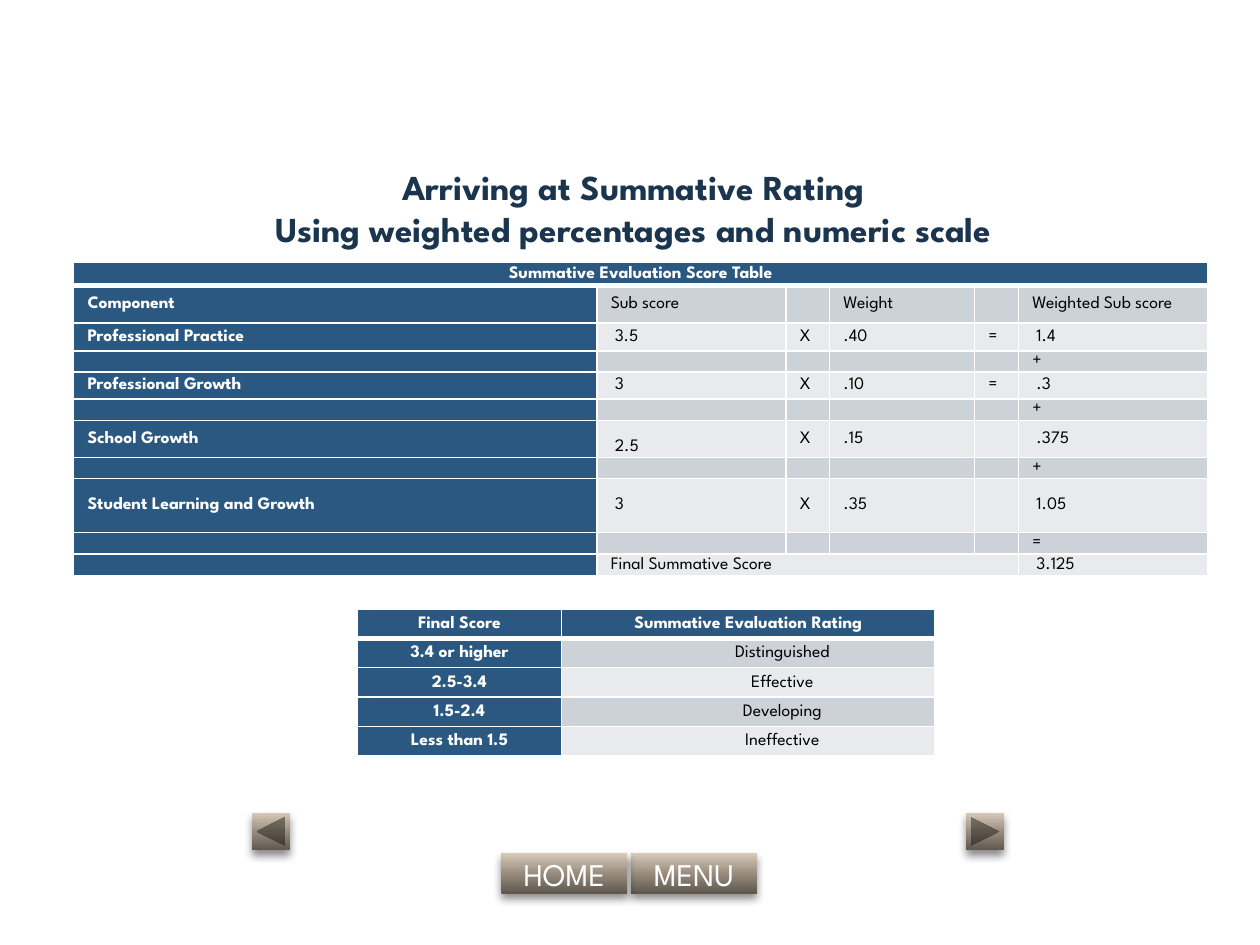
import dataclasses

import pptx
import pptx.dml.color
import pptx.enum.shapes
import pptx.enum.text
import pptx.oxml
import pptx.oxml.ns
import pptx.util

Pt = pptx.util.Pt
SHAPES = pptx.enum.shapes.MSO_SHAPE
ALIGN = pptx.enum.text.PP_ALIGN
MIDDLE = pptx.enum.text.MSO_ANCHOR.MIDDLE
NAMESPACE = pptx.oxml.ns.nsdecls("a")


@dataclasses.dataclass(frozen=True)
class Theme:
    font: str = "League Spartan"
    title: str = "1A354D"
    header: str = "2B5880"
    dark_band: str = "CDD1D8"
    light_band: str = "E8EAED"
    white: str = "FFFFFF"
    black: str = "000000"
    button_stops: tuple = ((0, "5F574E"), (50, "988C7E"), (70, "B2A596"), (100, "D8CAB8"))
    title_size: int = 20
    button_size: int = 18
    table_size: int = 10


THEME = Theme()


def rgb(value):
    return pptx.dml.color.RGBColor.from_string(value)


def style(paragraph, size, color, bold=False, align=ALIGN.LEFT):
    paragraph.alignment = align
    paragraph.font.name = THEME.font
    paragraph.font.size = Pt(size)
    paragraph.font.bold = bold
    paragraph.font.color.rgb = rgb(color)


def add_button(page, kind, left, top, width, height, label=""):
    button = page.shapes.add_shape(kind, Pt(left), Pt(top), Pt(width), Pt(height))
    button.line.fill.background()
    button.fill.gradient()
    button.fill.gradient_angle = 90
    properties = button._element.spPr
    stops = properties.find(".//" + pptx.oxml.ns.qn("a:gsLst"))
    for stop in list(stops):
        stops.remove(stop)
    for position, color in THEME.button_stops:
        stops.append(pptx.oxml.parse_xml(
            f'<a:gs {NAMESPACE} pos="{position * 1000}"><a:srgbClr val="{color}"/></a:gs>'))
    button.shadow.inherit = False
    properties.find(pptx.oxml.ns.qn("a:effectLst")).append(pptx.oxml.parse_xml(
        f'<a:outerShdw {NAMESPACE} blurRad="{Pt(5)}" dist="{Pt(3)}" dir="5400000" rotWithShape="0">'
        f'<a:srgbClr val="{THEME.black}"><a:alpha val="45000"/></a:srgbClr></a:outerShdw>'))
    if label:
        frame = button.text_frame
        frame.vertical_anchor = MIDDLE
        frame.text = label
        style(frame.paragraphs[0], THEME.button_size, THEME.white, align=ALIGN.CENTER)


def add_title(page, text):
    box = page.shapes.add_textbox(Pt(2), Pt(96), Pt(720), Pt(66))
    frame = box.text_frame
    frame.word_wrap = True
    frame.vertical_anchor = MIDDLE
    frame.margin_top, frame.margin_bottom = 0, Pt(21)
    frame.text = text
    paragraph = frame.paragraphs[0]
    paragraph.line_spacing = Pt(24)
    style(paragraph, THEME.title_size, THEME.title, True, ALIGN.CENTER)


def set_borders(cell, bottom):
    properties = cell._tc.get_or_add_tcPr()
    for side, width in (("L", 1), ("R", 1), ("T", 1), ("B", bottom)):
        properties.append(pptx.oxml.parse_xml(
            f'<a:ln{side} {NAMESPACE} w="{Pt(width)}"><a:solidFill>'
            f'<a:srgbClr val="{THEME.white}"/></a:solidFill></a:ln{side}>'))


def add_table(page, left, top, widths, heights, rows, inset, inset_top=0, align=ALIGN.LEFT):
    frame = page.shapes.add_table(len(rows), len(widths), Pt(left), Pt(top),
                                  Pt(sum(widths)), Pt(sum(heights)))
    table = frame.table
    for column, width in zip(table.columns, widths):
        column.width = Pt(width)
    for line, height in zip(table.rows, heights):
        line.height = Pt(height)
    for row, texts in enumerate(rows):
        for column, text in enumerate(texts):
            cell = table.cell(row, column)
            heading = row == 0 or column == 0
            band = THEME.dark_band if row % 2 else THEME.light_band
            set_borders(cell, 3 if row == 0 else 1)
            cell.fill.solid()
            cell.fill.fore_color.rgb = rgb(THEME.header if heading else band)
            cell.vertical_anchor = MIDDLE
            cell.margin_left = cell.margin_right = Pt(inset)
            cell.margin_top, cell.margin_bottom = Pt(inset_top), 0
            cell.text = text
            style(cell.text_frame.paragraphs[0], THEME.table_size,
                  THEME.white if heading else THEME.black, heading, align)
    return table


def add_score_table(page):
    components = [
        ("Professional Practice", "3.5", "X", ".40", "=", "1.4"),
        ("Professional Growth", "3", "X", ".10", "=", ".3"),
        ("School Growth", "2.5", "X", ".15", "", ".375"),
        ("Student Learning and Growth", "3", "X", ".35", "", "1.05"),
    ]
    rows = [("Summative Evaluation Score Table", "", "", "", "", ""),
            ("Component", "Sub score", "", "Weight", "", "Weighted Sub score")]
    for component, sign in zip(components, "+++="):
        rows += [component, ("", "", "", "", "", sign)]
    rows.append(("", "Final Summative Score", "", "", "", "3.125"))
    heights = [13, 21.5, 16, 10.8, 15.6, 10.8, 21.2, 10.8, 31, 10.8, 12.6]
    table = add_table(page, 42, 150, [299, 108, 25, 83, 25, 108], heights, rows, 8)
    table.cell(0, 0).merge(table.cell(0, 5))
    table.cell(0, 0).text_frame.paragraphs[0].alignment = ALIGN.CENTER
    table.cell(10, 1).merge(table.cell(10, 4))
    for row in range(2, 11, 2):
        for column in (1, 5):
            if (row, column) != (10, 1):
                table.cell(row, column).margin_left = Pt(10.3)
    table.cell(6, 1).margin_top = Pt(9.2)


def add_rating_table(page):
    rows = [
        ("Final Score", "Summative Evaluation Rating"),
        ("3.4 or higher", "Distinguished"),
        ("2.5-3.4", "Effective"),
        ("1.5-2.4", "Developing"),
        ("Less than 1.5", "Ineffective"),
    ]
    table = add_table(page, 204, 348, [117, 213], [16.8] * 5, rows, 5, 0.7, ALIGN.CENTER)
    for row in range(1, 5):
        table.cell(row, 1).margin_left = Pt(44)


def main():
    deck = pptx.Presentation()
    deck.slide_width, deck.slide_height = Pt(720), Pt(540)
    page = deck.slides.add_slide(deck.slide_layouts[6])
    add_button(page, SHAPES.ACTION_BUTTON_FORWARD_OR_NEXT, 552, 464.4, 21.6, 21.6)
    add_button(page, SHAPES.ACTION_BUTTON_BACK_OR_PREVIOUS, 144, 464.4, 21.6, 21.6)
    for left, label in ((360.5, "MENU"), (286.5, "HOME")):
        add_button(page, SHAPES.ACTION_BUTTON_CUSTOM, left, 487.6, 72, 23, label)
    add_title(page, "Arriving at Summative Rating\vUsing weighted percentages and numeric scale")
    add_score_table(page)
    add_rating_table(page)
    deck.save("out.pptx")


if __name__ == "__main__":
    main()
